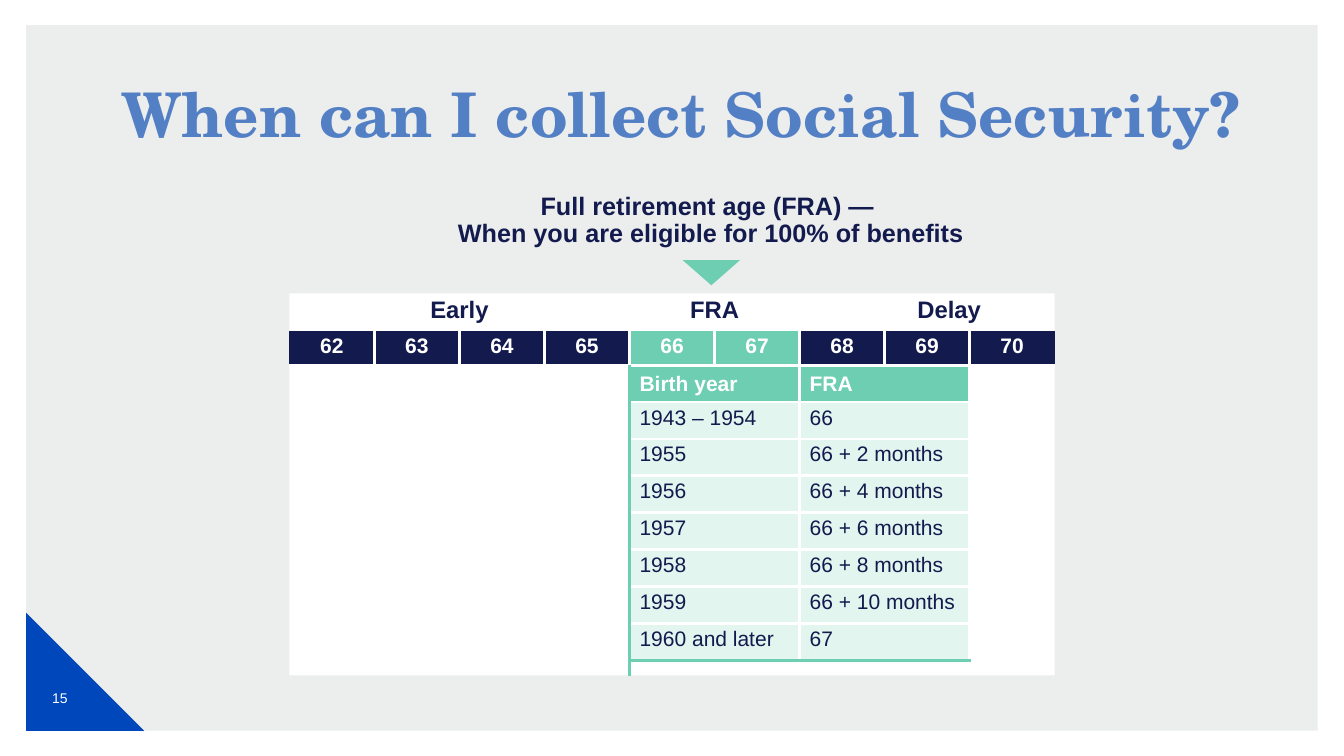
from lxml import etree
from pptx import Presentation
from pptx.dml.color import RGBColor
from pptx.enum import shapes, text
from pptx.oxml.ns import qn
from pptx.util import Inches, Pt

# Content
TITLE = "When can I collect Social Security?"
CAPTION = "Full retirement age (FRA) — \vWhen you are eligible for 100% of benefits"
PAGE = "15"
PHASES = [("Early", 0, 4), ("FRA", 4, 2), ("Delay", 6, 3)]  # label, first column, span
AGES = range(62, 71)
FRA_AGES = (66, 67)
FRA_HEADER = ("Birth year", "FRA")
FRA_ROWS = [
    ("1943 – 1954", "66"),
    ("1955", "66 + 2 months"),
    ("1956", "66 + 4 months"),
    ("1957", "66 + 6 months"),
    ("1958", "66 + 8 months"),
    ("1959", "66 + 10 months"),
    ("1960 and later", "67"),
]
COLORS = {"blue": "0047BB", "navy": "131A4D", "green": "6ECEB1", "mint": "E2F5EF",
          "gray": "D0D3D4", "white": "FFFFFF"}
FONT, TITLE_FONT = "Arial", "TeX Gyre Schola"
LEFT, TOP, WIDTH, HEIGHT = 2.87, 2.91, 7.59, 3.79
HEIGHTS = [0.37, 0.35, 0.36] + [0.366] * len(FRA_ROWS)
CENTER, START = text.PP_ALIGN.CENTER, text.PP_ALIGN.LEFT
TOP_ANCHOR, MIDDLE = text.MSO_ANCHOR.TOP, text.MSO_ANCHOR.MIDDLE


def rgb(name):
    return RGBColor.from_string(COLORS[name])


def write(tf, content, size, color, bold=False, align=CENTER, font=FONT, spacing=None):
    tf.text = content
    tf.word_wrap = True
    p = tf.paragraphs[0]
    p.alignment, p.line_spacing = align, spacing
    for r in p.runs:
        r.font.name, r.font.size, r.font.bold = font, Pt(size), bold
        r.font.color.rgb = rgb(color)


def add_shape(kind, box, color):
    sp = slide.shapes.add_shape(kind, *map(Inches, box))
    sp.shadow.inherit = False
    sp.fill.solid()
    sp.fill.fore_color.rgb = rgb(color)
    sp.line.fill.background()
    return sp


def add_text(box, anchor, *args, **kwargs):
    tf = slide.shapes.add_textbox(*map(Inches, box)).text_frame
    tf.margin_left = tf.margin_right = 0
    tf.vertical_anchor = anchor
    write(tf, *args, **kwargs)


def set_cell(cell, content, size, color, fill=None, margin=0.04, anchor=TOP_ANCHOR, **kwargs):
    write(cell.text_frame, content, size, color, **kwargs)
    cell.margin_top = cell.margin_bottom = Inches(margin)
    cell.vertical_anchor = anchor
    if fill:
        cell.fill.solid()
        cell.fill.fore_color.rgb = rgb(fill)


def set_borders(cell, **sides):
    props = cell._tc.get_or_add_tcPr()
    for i, (side, color) in enumerate(sides.items()):  # sides come in L, R, T, B order
        ln = etree.Element(qn("a:ln" + side), w=str(Pt(2.25)))
        solid = etree.SubElement(ln, qn("a:solidFill"))
        etree.SubElement(solid, qn("a:srgbClr"), val=COLORS[color])
        props.insert(i, ln)


prs = Presentation()
prs.slide_width, prs.slide_height = Inches(13.33), Inches(7.5)
slide = prs.slides.add_slide(prs.slide_layouts[5])

# Backdrop, corner and page number
backdrop = add_shape(shapes.MSO_SHAPE.RECTANGLE, (0.26, 0.25, 12.81, 7), "gray")
gray = backdrop._element.spPr.find(qn("a:solidFill"))[0]
etree.SubElement(gray, qn("a:alpha"), val="40000")
add_shape(shapes.MSO_SHAPE.RIGHT_TRIANGLE, (0.26, 6.08, 1.17, 1.17), "blue")
add_text((0.32, 6.63, 0.55, 0.58), MIDDLE, PAGE, 10, "white")
add_shape(shapes.MSO_SHAPE.RECTANGLE, (LEFT, TOP, WIDTH, HEIGHT), "white")

# Title
title = slide.shapes.title
title.left, title.top, title.width, title.height = map(Inches, (1.16, 0.79, 11.2, 1.3))
tf = title.text_frame
tf.margin_left = tf.margin_right = 0
tf.vertical_anchor = TOP_ANCHOR
write(tf, TITLE, 44, "blue", bold=True, font=TITLE_FONT, spacing=0.9)

# Table
frame = slide.shapes.add_table(len(HEIGHTS), len(AGES),
                               *map(Inches, (LEFT, TOP, WIDTH, sum(HEIGHTS))))
table = frame.table
table.first_row = table.horz_banding = False
table._tbl.tblPr.find(qn("a:tableStyleId")).text = "{2D5ABB26-0587-4C30-8999-92F81FD0307C}"
for col in table.columns:
    col.width = Inches(WIDTH / len(AGES))
for row, height in zip(table.rows, HEIGHTS):
    row.height = Inches(height)
for cell in table.iter_cells():
    cell.margin_top = cell.margin_bottom = Inches(0.02)
    cell.fill.background()

# Phases and ages
for label, first, span in PHASES:
    cell = table.cell(0, first)
    cell.merge(table.cell(0, first + span - 1))
    set_cell(cell, label, 17, "navy", bold=True)
    if label == "Delay":
        cell.margin_left = Inches(0.54)
for i, age in enumerate(AGES):
    cell = table.cell(1, i)
    set_cell(cell, str(age), 15, "white", "green" if age in FRA_AGES else "navy", bold=True)
    sides = {"L": i > 0, "R": i < len(AGES) - 1, "B": True}
    set_borders(cell, **{side: "white" for side, shown in sides.items() if shown})

# Birth years and their full retirement age
last = len(HEIGHTS) - 1
blank = table.cell(2, 0)
blank.merge(table.cell(last, 3))
set_borders(blank, R="green", T="white")
for i, pair in enumerate([FRA_HEADER] + FRA_ROWS, start=2):
    for first, content in zip((4, 6), pair):
        cell = table.cell(i, first)
        cell.merge(table.cell(i, first + 1))
        sides = {"L": "green" if first == 4 else "white"}
        if first == 4 or i == 2:
            sides["R"] = "white"
        if i != 3:
            sides["T"] = "white"
        if i > 2:
            sides["B"] = "green" if i == last else "white"
            set_cell(cell, content, 15, "navy", "mint", align=START)
        else:
            set_cell(cell, content, 15, "white", "green", margin=0, anchor=MIDDLE,
                     bold=True, align=START)
        set_borders(cell, **sides)

# Caption, pointer and vertical rule
add_text((4.2, 1.87, 5.7, 0.8), TOP_ANCHOR, CAPTION, 18, "navy", bold=True, spacing=0.9)
pointer = add_shape(shapes.MSO_SHAPE.ISOSCELES_TRIANGLE, (6.77, 2.58, 0.57, 0.25), "green")
pointer.rotation = 180
rule = slide.shapes.add_connector(shapes.MSO_CONNECTOR.STRAIGHT,
                                  *map(Inches, (6.24, 3.66, 6.24, 6.71)))
rule.line.color.rgb = rgb("green")
rule.line.width = Pt(2.25)
etree.SubElement(rule._element.spPr, qn("a:effectLst"))

prs.save("out.pptx")
